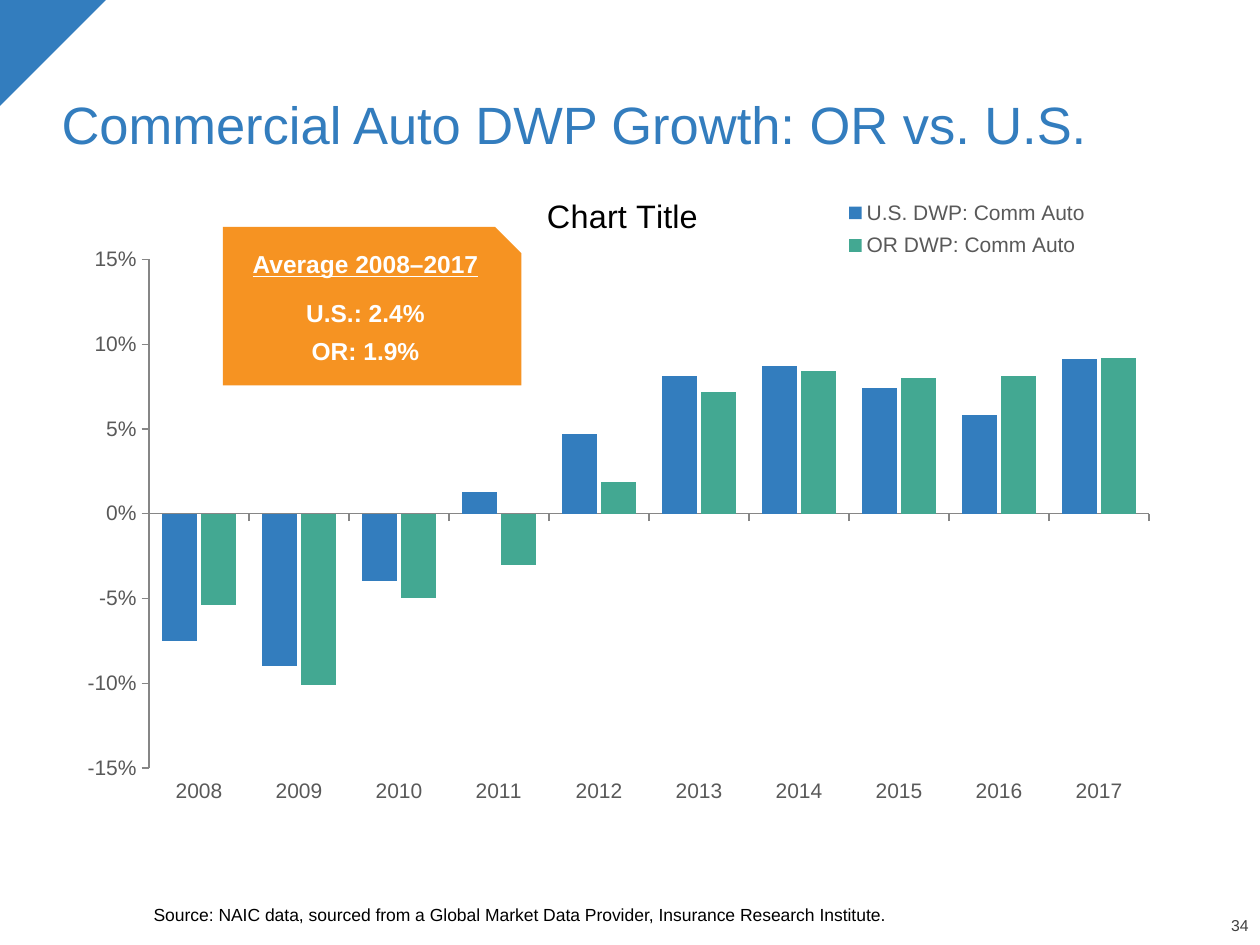
from pptx import Presentation
from pptx.chart.data import CategoryChartData
from pptx.dml.color import RGBColor
from pptx.enum.chart import XL_CHART_TYPE, XL_LEGEND_POSITION, XL_TICK_LABEL_POSITION, XL_TICK_MARK
from pptx.enum.shapes import MSO_SHAPE
from pptx.enum.text import MSO_ANCHOR, PP_ALIGN
from pptx.oxml import parse_xml
from pptx.oxml.ns import nsdecls
from pptx.util import Pt

INK = {"blue": "337DBE", "green": "43A892", "orange": "F69322", "white": "FFFFFF",
       "black": "000000", "grey": "595959", "dark": "404040", "axis": "868686"}
YEARS = [str(year) for year in range(2008, 2018)]
GROWTH = [
    ("U.S. DWP: Comm Auto", "blue",
     (-0.075, -0.09, -0.04, 0.013, 0.047, 0.081, 0.087, 0.074, 0.058, 0.091)),
    ("OR DWP: Comm Auto", "green",
     (-0.054, -0.101, -0.05, -0.03, 0.019, 0.072, 0.084, 0.08, 0.081, 0.092)),
]


def tint(name):
    return RGBColor.from_string(INK[name])


def style(font, size, color, bold=False, line=False):
    font.name, font.size, font.bold, font.underline = "Arial", Pt(size), bold, line
    font.color.rgb = tint(color)


def write(frame, text, size=14, color="black", bold=False, line=False,
          align=PP_ALIGN.LEFT, lead=0.9, before=0, after=0):
    """Fill the empty first paragraph, or add one after the others."""
    para = frame.paragraphs[0]
    if para.runs:
        para = frame.add_paragraph()
        para.space_before = Pt(before)
    para.alignment, para.line_spacing, para.space_after = align, lead, Pt(after)
    run = para.add_run()
    run.text = text
    style(run.font, size, color, bold, line)


def setup(frame, pads, anchor):
    """Set wrap, anchor and the left, top, right and bottom insets."""
    frame.word_wrap, frame.vertical_anchor = True, anchor
    (frame.margin_left, frame.margin_top,
     frame.margin_right, frame.margin_bottom) = map(Pt, pads)


def label(slide, box, text, pads=(0, 0, 0, 0), **kind):
    frame = slide.shapes.add_textbox(*map(Pt, box)).text_frame
    setup(frame, pads, MSO_ANCHOR.BOTTOM)
    write(frame, text, **kind)


def block(slide, form, box, color):
    shape = slide.shapes.add_shape(form, *map(Pt, box))
    shape.shadow.inherit = False
    shape.fill.solid()
    shape.fill.fore_color.rgb = tint(color)
    shape.line.fill.background()
    return shape


def place(part, inner=False, **spots):
    """Give a chart part a manual layout in fractions of the chart."""
    for old in part.findall("c:layout", part.nsmap):
        part.remove(old)
    modes = '<c:layoutTarget val="inner"/>' if inner else ""
    modes += '<c:xMode val="edge"/><c:yMode val="edge"/>'
    marks = "".join(f'<c:{key} val="{val}"/>' for key, val in spots.items())
    return parse_xml(f'<c:layout {nsdecls("c")}><c:manualLayout>{modes}{marks}'
                     '</c:manualLayout></c:layout>')


def rule(axis):
    axis.has_major_gridlines = False
    axis.major_tick_mark, axis.minor_tick_mark = XL_TICK_MARK.OUTSIDE, XL_TICK_MARK.NONE
    axis.format.line.color.rgb = tint("axis")
    axis.format.line.width = Pt(0.75)
    style(axis.tick_labels.font, 12, "grey")


def graph(slide, box):
    data = CategoryChartData(number_format="0%")
    data.categories = YEARS
    for name, _, vals in GROWTH:
        data.add_series(name, vals)
    chart = slide.shapes.add_chart(XL_CHART_TYPE.COLUMN_CLUSTERED, *map(Pt, box), data).chart
    style(chart.font, 10, "black")

    write(chart.chart_title.text_frame, "Chart Title", size=18.5,
          align=PP_ALIGN.CENTER, lead=1.0)
    title = chart.chart_title._element
    title.find("c:tx", title.nsmap).addnext(place(title, x=0.43, y=0.045))

    plot = chart.plots[0]
    plot.gap_width, plot.overlap, plot.vary_by_categories = 75, -10, False
    for bars, (_, color, _) in zip(plot.series, GROWTH):
        bars.invert_if_negative = False
        bars.format.fill.solid()
        bars.format.fill.fore_color.rgb = tint(color)
    area = chart._chartSpace.chart.plotArea
    area.insert(0, place(area, inner=True, x=0.0755, y=0.1535, w=0.904, h=0.775))

    years, rates = chart.category_axis, chart.value_axis
    rule(years)
    rule(rates)
    years.tick_label_position = XL_TICK_LABEL_POSITION.LOW
    rates.minimum_scale, rates.maximum_scale, rates.major_unit = -0.15, 0.15, 0.05
    rates.tick_labels.number_format = "0%"
    rates.tick_labels.number_format_is_linked = False

    chart.has_legend = True
    key = chart.legend
    key.position, key.include_in_layout = XL_LEGEND_POSITION.TOP, True
    style(key.font, 12, "grey")
    part = key._element
    part.find("c:legendPos", part.nsmap).addnext(place(part, x=0.695, y=0.05, w=0.24, h=0.115))


def callout(slide, box):
    frame = block(slide, MSO_SHAPE.SNIP_1_RECTANGLE, box, "orange").text_frame
    setup(frame, (7.2, 3.6, 7.2, 7.2), MSO_ANCHOR.MIDDLE)
    look = dict(color="white", bold=True, align=PP_ALIGN.CENTER, lead=0.85, before=7.5)
    write(frame, "Average 2008–2017", line=True, after=6, **look)
    for text in ("U.S.: 2.4%", "OR: 1.9%"):
        write(frame, text, **look)


def main():
    deck = Presentation()
    deck.slide_width, deck.slide_height = Pt(720), Pt(540)
    slide = deck.slides.add_slide(deck.slide_layouts[6])
    block(slide, MSO_SHAPE.RIGHT_TRIANGLE, (0, 0, 60.5, 60.5), "blue").rotation = 90
    label(slide, (679, 524.9, 34.5, 9.4), "34", size=9, color="dark", align=PP_ALIGN.RIGHT)
    graph(slide, (37.4, 90.7, 632.2, 375.1))
    label(slide, (28.1, 18, 629.3, 74.9), "Commercial Auto DWP Growth: OR vs. U.S.",
          pads=(7.2, 3.6, 7.2, 3.6), size=30, color="blue")
    label(slide, (87.8, 496.1, 604.8, 32.4),
          "Source: NAIC data, sourced from a Global Market Data Provider, "
          "Insurance Research Institute.", size=10)
    callout(slide, (127.4, 129.6, 170.6, 90.7))
    deck.save("out.pptx")


if __name__ == "__main__":
    main()
